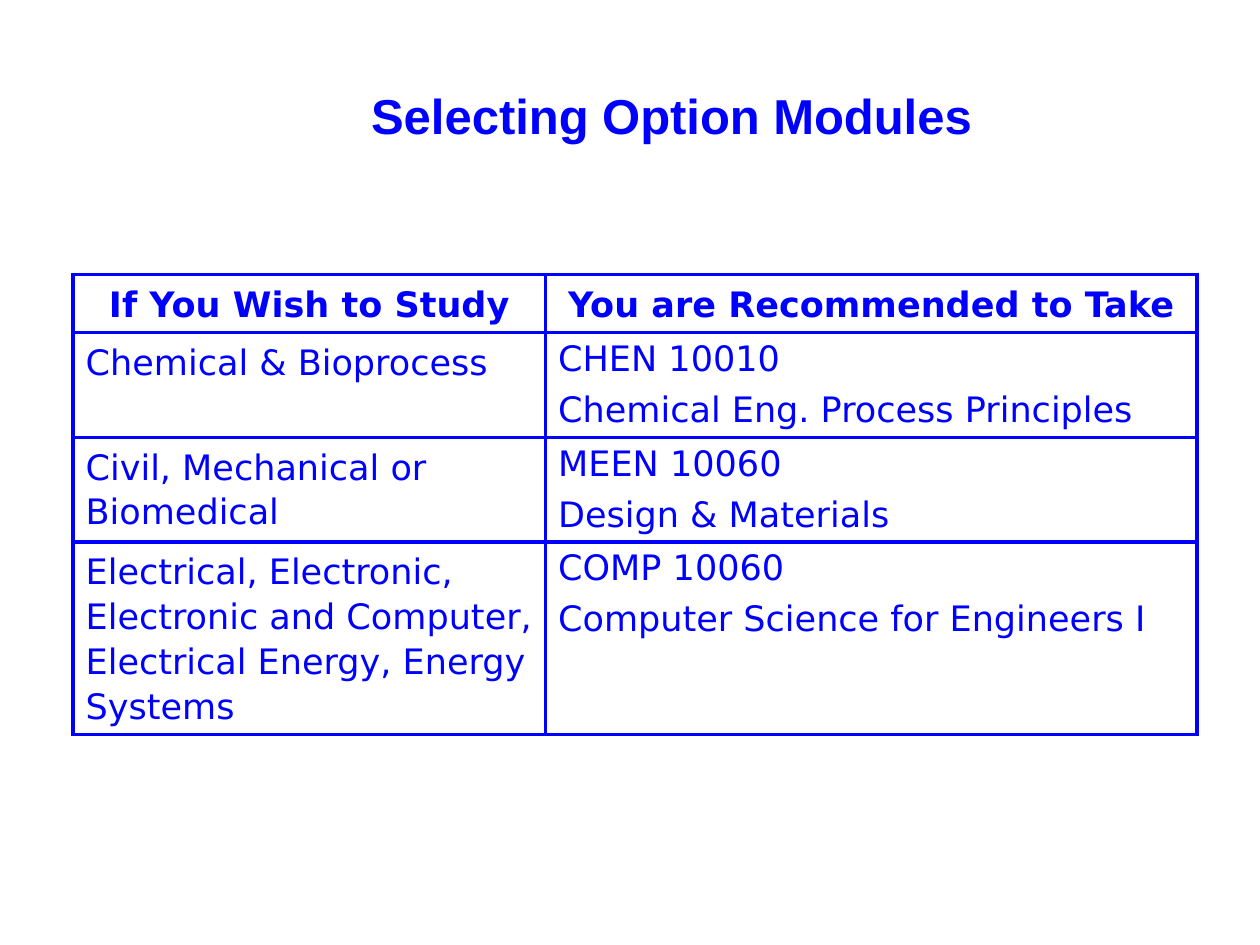
from lxml import etree
from pptx import Presentation, util as u
from pptx.dml.color import RGBColor
from pptx.enum import text
from pptx.oxml import ns

BLUE = RGBColor(0x00, 0x00, 0xFF)
COLUMNS = [3.75, 5.17]
ROWS = [0.46, 0.83, 0.83, 1.53]
MODULES = [
    ("If You Wish to Study", ["You are Recommended to Take"]),
    ("Chemical & Bioprocess", ["CHEN 10010", "Chemical Eng. Process Principles"]),
    ("Civil, Mechanical or Biomedical", ["MEEN 10060", "Design & Materials"]),
    ("Electrical, Electronic, Electronic and Computer, Electrical Energy, Energy Systems",
     ["COMP 10060", "Computer Science for Engineers I"]),
]


def format_font(p, name, size, bold):
    values = {"name": name, "size": u.Pt(size), "bold": bold}
    for r in p.runs:
        for key, value in values.items():
            setattr(r.font, key, value)
        r.font.color.rgb = BLUE


def add_borders(cell, width):
    tcPr = cell._tc.get_or_add_tcPr()
    for side in ("lnL", "lnR", "lnT", "lnB"):
        ln = etree.SubElement(tcPr, ns.qn(f"a:{side}"), w=str(u.Pt(width)))
        fill = etree.SubElement(ln, ns.qn("a:solidFill"))
        etree.SubElement(fill, ns.qn("a:srgbClr"), val=str(BLUE))


prs = Presentation()
prs.slide_width, prs.slide_height = u.Inches(10), u.Inches(7.5)
s = prs.slides.add_slide(prs.slide_layouts[5])

title = s.shapes.title
box = {"left": 1.08, "top": 0.58, "width": 8.5, "height": 0.75}
for key, value in box.items():
    setattr(title, key, u.Inches(value))
tf = title.text_frame
tf.text = "Selecting Option Modules"
tf.auto_size = text.MSO_AUTO_SIZE.NONE
tf.vertical_anchor = text.MSO_ANCHOR.TOP
p = tf.paragraphs[0]
p.alignment = text.PP_ALIGN.CENTER
p.line_spacing = 1.1
format_font(p, "Arial", 28, True)

table = s.shapes.add_table(
    len(ROWS), len(COLUMNS), u.Inches(0.58), u.Inches(2.18),
    u.Inches(sum(COLUMNS)), u.Inches(sum(ROWS))).table
table.horz_banding = False
for column, width in zip(table.columns, COLUMNS):
    column.width = u.Inches(width)
for row, height in zip(table.rows, ROWS):
    row.height = u.Inches(height)

for i, (study, modules) in enumerate(MODULES):
    header = i == 0
    for j, lines in enumerate(([study], modules)):
        cell = table.cell(i, j)
        add_borders(cell, 2.25)
        cell.fill.background()
        tf = cell.text_frame
        tf.text = "\n".join(lines)
        for n, p in enumerate(tf.paragraphs):
            p.alignment = text.PP_ALIGN.CENTER if header else text.PP_ALIGN.LEFT
            p.line_spacing = 1.1 if header or j == 0 else 1.0
            if n > 0:
                p.space_before = u.Pt(6)
            format_font(p, "DejaVu Sans", 20, header)

prs.save("out.pptx")
